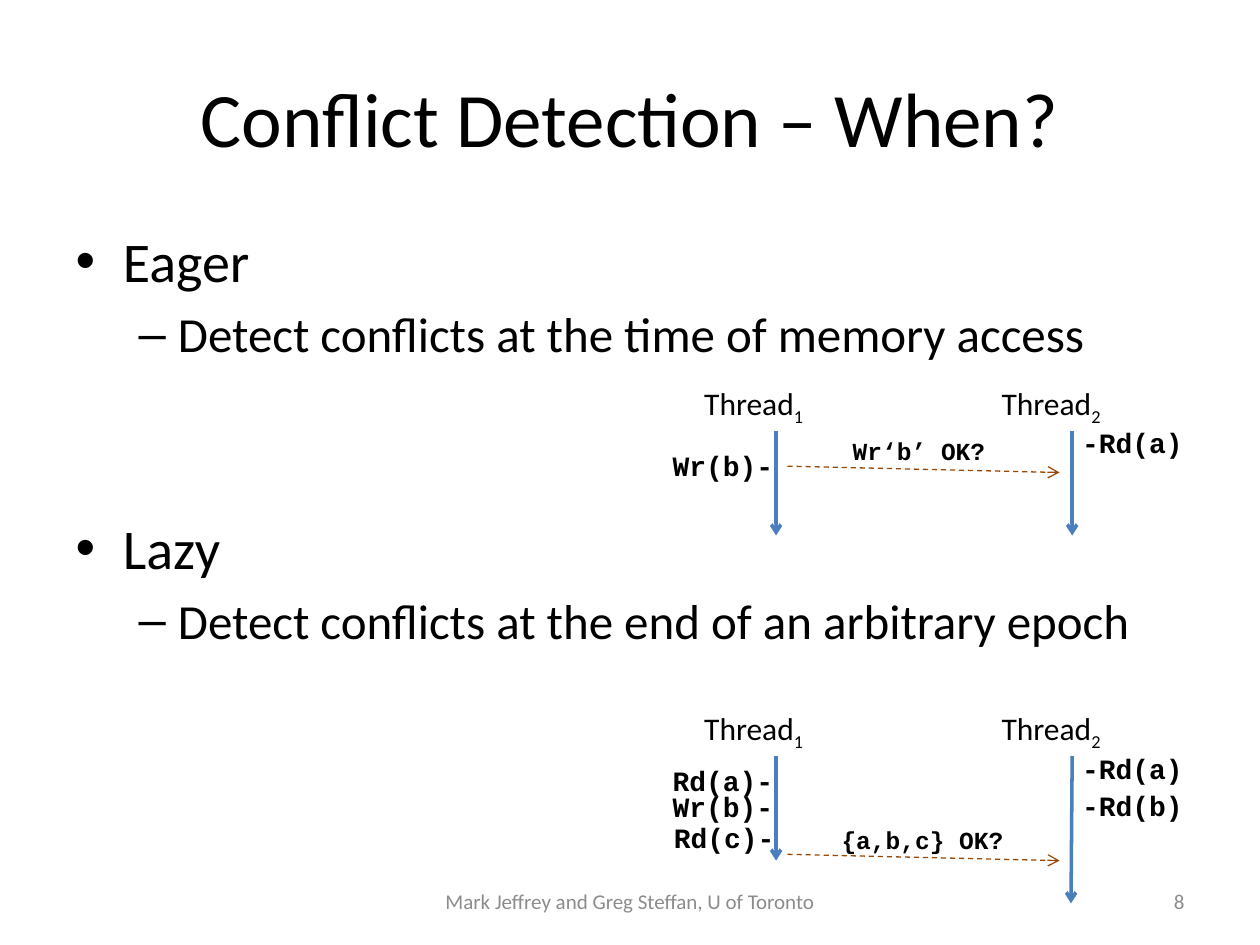
"""Build the slide comparing eager and lazy conflict detection."""
from lxml import etree
from pptx import Presentation
from pptx.dml.color import RGBColor
from pptx.enum.dml import MSO_LINE
from pptx.enum.shapes import MSO_CONNECTOR
from pptx.enum.text import MSO_ANCHOR, PP_ALIGN
from pptx.oxml.ns import qn
from pptx.util import Pt

STRAIGHT = MSO_CONNECTOR.STRAIGHT
DASH = MSO_LINE.DASH
MIDDLE = MSO_ANCHOR.MIDDLE
CENTER, RIGHT = PP_ALIGN.CENTER, PP_ALIGN.RIGHT
BLACK = RGBColor(0x00, 0x00, 0x00)
GRAY = RGBColor(0x8C, 0x8C, 0x8C)
BLUE = RGBColor(0x4B, 0x7E, 0xBC)
BROWN = RGBColor(0x98, 0x48, 0x07)

THREAD = {"name": "Calibri", "size": Pt(18)}
ACCESS = {"name": "Courier New", "size": Pt(16), "bold": True}
QUERY = {"name": "Courier New", "size": Pt(14), "bold": True}
FOOTER = {"name": "Calibri", "size": Pt(12)}


def add_label(shapes, box, text, font_format, color=BLACK, subscript=""):
    label = shapes.add_textbox(*(Pt(length) for length in box))
    label.text_frame.word_wrap = False
    paragraph = label.text_frame.paragraphs[0]
    for part in filter(None, (text, subscript)):
        run = paragraph.add_run()
        run.text = part
        run.font.color.rgb = color
        for attribute, value in font_format.items():
            setattr(run.font, attribute, value)
    if subscript:
        run.font._element.set("baseline", "-25000")
    return label


def add_arrow(shapes, ends, color, width, dash=None):
    arrow = shapes.add_connector(STRAIGHT, *(Pt(length) for length in ends))
    arrow.line.color.rgb = color
    arrow.line.width = Pt(width)
    arrow.line.dash_style = dash
    etree.SubElement(arrow.line._get_or_add_ln(), qn("a:tailEnd"), type="arrow")
    etree.SubElement(arrow._element.spPr, qn("a:effectLst"))


prs = Presentation()
prs.slide_width, prs.slide_height = Pt(720), Pt(540)
slide = prs.slides.add_slide(prs.slide_layouts[1])

title, body = slide.placeholders
for placeholder, box in ((title, (36, 21.6, 648, 90)), (body, (36, 126, 648, 356.4))):
    placeholder.left, placeholder.top, placeholder.width, placeholder.height = (
        Pt(length) for length in box)

title.text_frame.text = "Conflict Detection – When?"
title_paragraph = title.text_frame.paragraphs[0]
title_paragraph.alignment = CENTER
for attribute, value in {"name": "Calibri", "size": Pt(44)}.items():
    setattr(title_paragraph.font, attribute, value)

points = (
    ("Eager", 0, 32, 6.4),
    ("Detect conflicts at the time of memory access", 1, 28, 5.6),
    ("Lazy", 0, 32, 86),
    ("Detect conflicts at the end of an arbitrary epoch", 1, 28, 5.6),
)
body.text_frame.text = "\n".join(point[0] for point in points)
for paragraph, (_, level, size, gap) in zip(body.text_frame.paragraphs, points):
    paragraph.level = level
    paragraph.space_before = Pt(gap)
    paragraph.font.name = "Calibri"
    paragraph.font.size = Pt(size)

for box, text, alignment in (
    ((246, 500.4, 228, 28.8), "Mark Jeffrey and Greg Steffan, U of Toronto", CENTER),
    ((516, 500.4, 168, 28.8), "8", RIGHT),
):
    footer = add_label(slide.shapes, box, text, FOOTER, GRAY)
    footer.text_frame.word_wrap = True
    footer.text_frame.vertical_anchor = MIDDLE
    footer.text_frame.paragraphs[0].alignment = alignment

timelines = (
    {
        "top": 216,
        "thread_ends": ((443.5, 306), (612.7, 306)),
        "accesses": ((377.3, 252.7, "Wr(b)-"), (611.3, 239.8, "-Rd(a)")),
        "query_top": 266.4,
        "query": ((480.2, 245.5, 90, 24.5), "Wr‘b’ OK?"),
    },
    {
        "top": 401.8,
        "thread_ends": ((443.5, 491.8), (612, 516.2)),
        "accesses": (
            (377.3, 432.7, "Rd(a)-"), (377.3, 447.8, "Wr(b)-"), (378, 465.1, "Rd(c)-"),
            (611.3, 426.2, "-Rd(a)"), (611.3, 447.1, "-Rd(b)"),
        ),
        "query_top": 488.2,
        "query": ((473.8, 468, 108, 24.5), "{a,b,c} OK?"),
    },
)
for timeline in timelines:
    shapes = slide.shapes.add_group_shape().shapes
    top, query_top = timeline["top"], timeline["query_top"]
    for number, left, start, end in zip(
            "12", (395.3, 565.2), (443.5, 612.7), timeline["thread_ends"]):
        add_label(shapes, (left, top, 72.7, 28.8), "Thread", THREAD, subscript=number)
        add_arrow(shapes, (start, top + 30.2, *end), BLUE, 2)
    for left, access_top, operation in timeline["accesses"]:
        add_label(shapes, (left, access_top, 72.7, 26.6), operation, ACCESS)
    add_arrow(shapes, (450, query_top, 605.5, query_top + 3.6), BROWN, 0.75, DASH)
    add_label(shapes, *timeline["query"], QUERY)

prs.save("out.pptx")
